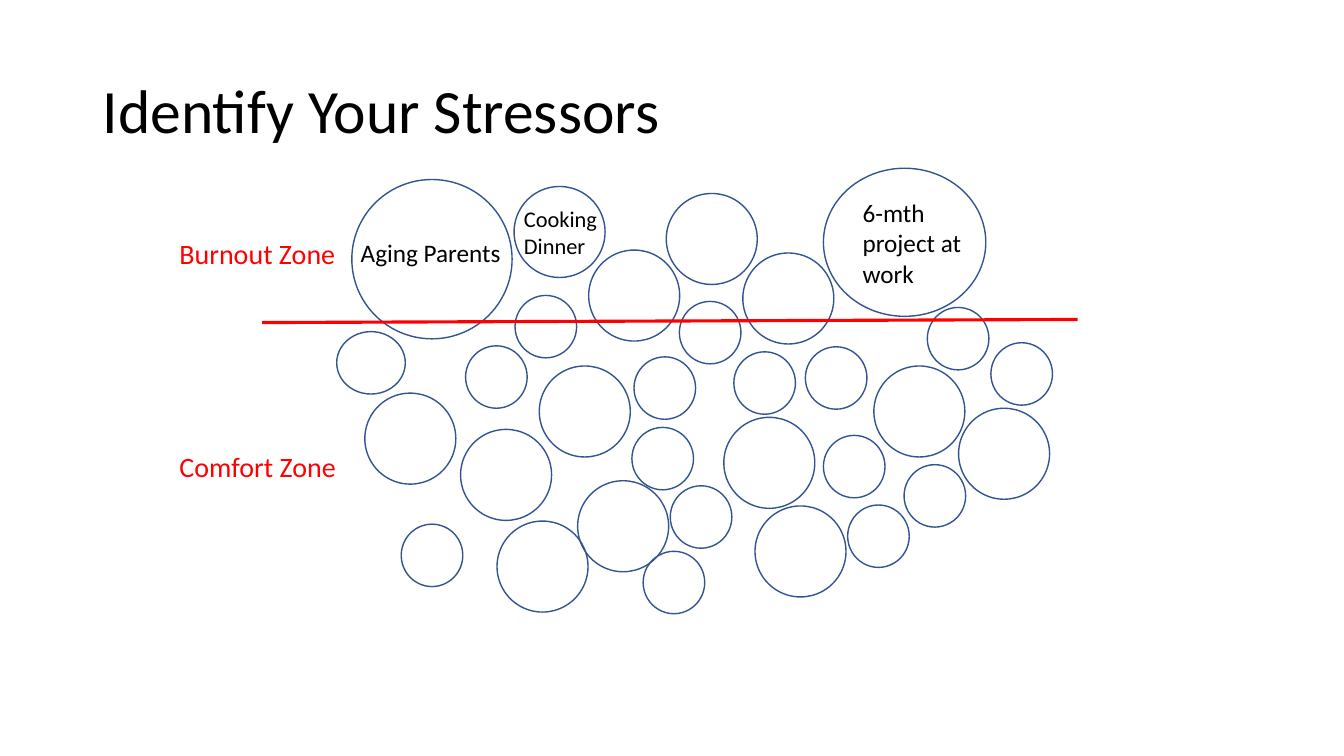
from lxml import etree
from pptx import Presentation
from pptx.dml.color import RGBColor
from pptx.enum import shapes, text
from pptx.oxml.ns import qn
from pptx.util import Pt

BLACK = RGBColor(0x00, 0x00, 0x00)
WHITE = RGBColor(0xFF, 0xFF, 0xFF)
RED = RGBColor(0xFF, 0x00, 0x00)
OUTLINE_BLUE = RGBColor(0x32, 0x54, 0x91)
FONT = "Calibri"

SMALL = (44, 44.6)
MEDIUM = (65, 65)
CIRCLES = {
    SMALL: [
        (127.9, 91), (422.4, 99.6), (245.3, 95.3), (92.6, 127),
        (212.9, 134.9), (284.2, 131.3), (335.3, 127.7), (467.8, 124.8),
        (211.4, 185.3), (348.2, 191), (405.8, 211.9), (238.8, 227),
        (46.6, 254.4), (365.5, 240.7), (219.4, 273.8),
    ],
    MEDIUM: [
        (127.2, 13.2), (235.9, 18.2), (180.5, 58.6), (290.6, 60.7),
        (145.2, 141.4), (384.2, 141.4), (20.6, 160.8), (444.7, 171.6),
        (277, 178.1), (89, 186.7), (172.6, 223.4), (115, 252.2),
        (299.3, 241.4),
    ],
    (49, 44.6): [(0.5, 116.9)],
    (114.5, 113.8): [(11.3, 8.2)],
    (116, 105.8): [(348.2, 0.2)],
}
STRESSORS = [
    ("Aging Parents", (10.6, 45.6, 116, 29), 18),
    ("Cooking\nDinner", (127.2, 23.3, 69, 46), 16),
    ("6-mth project at work", (369.1, 17.5, 88, 73), 18),
]


def write_text(shape, content, size, color=BLACK, wrap=True,
               anchor=text.MSO_ANCHOR.TOP, line_spacing=None, space_after=None):
    frame = shape.text_frame
    frame.text = content
    frame.auto_size = text.MSO_AUTO_SIZE.NONE
    frame.word_wrap = wrap
    frame.vertical_anchor = anchor
    for paragraph in frame.paragraphs:
        paragraph.alignment = text.PP_ALIGN.LEFT
        paragraph.line_spacing = line_spacing
        paragraph.space_after = space_after
        paragraph.font.name = FONT
        paragraph.font.size = Pt(size)
        paragraph.font.color.rgb = color


def add_title(slide, left, top, width, height):
    title = slide.shapes.title
    title.left, title.top = Pt(left), Pt(top)
    title.width, title.height = Pt(width), Pt(height)
    write_text(title, "Identify Your Stressors", 44,
               anchor=text.MSO_ANCHOR.MIDDLE, line_spacing=0.9)


def add_stressors(slide, left, top):
    for (width, height), positions in CIRCLES.items():
        for x, y in positions:
            circle = slide.shapes.add_shape(
                shapes.MSO_SHAPE.FLOWCHART_CONNECTOR,
                Pt(left + x), Pt(top + y), Pt(width), Pt(height))
            circle.shadow.inherit = False
            circle.fill.background()
            circle.line.color.rgb = OUTLINE_BLUE
            circle.line.width = Pt(1)
    for content, (x, y, width, height), size in STRESSORS:
        label = slide.shapes.add_textbox(
            Pt(left + x), Pt(top + y), Pt(width), Pt(height))
        write_text(label, content, size)


def add_threshold(slide, left, top, width, rise):
    line = slide.shapes.add_connector(
        shapes.MSO_CONNECTOR.STRAIGHT,
        Pt(left), Pt(top), Pt(left + width), Pt(top - rise))
    line.line.color.rgb = RED
    line.line.width = Pt(2.25)
    etree.SubElement(line._element.spPr, qn("a:effectLst"))


def add_zone_label(slide, content, left, top, width, height):
    label = slide.shapes.add_shape(
        shapes.MSO_SHAPE.RECTANGLE, Pt(left), Pt(top), Pt(width), Pt(height))
    label.shadow.inherit = False
    label.fill.solid()
    label.fill.fore_color.rgb = WHITE
    label.line.color.rgb = WHITE
    label.line.width = Pt(0.5)
    write_text(label, content, 20, color=RED, wrap=False,
               line_spacing=1.07, space_after=Pt(8))


def main():
    presentation = Presentation()
    presentation.slide_width, presentation.slide_height = Pt(960), Pt(540)
    slide = presentation.slides.add_slide(presentation.slide_layouts[5])
    add_title(slide, 66.2, 28.8, 828, 104.4)
    add_stressors(slide, 240, 120)
    add_threshold(slide, 187.2, 230.4, 582.5, 2.2)
    add_zone_label(slide, "Burnout Zone", 121, 163.4, 123.8, 35.3)
    add_zone_label(slide, "Comfort Zone", 121, 316.1, 116.6, 31)
    presentation.save("out.pptx")


if __name__ == "__main__":
    main()
